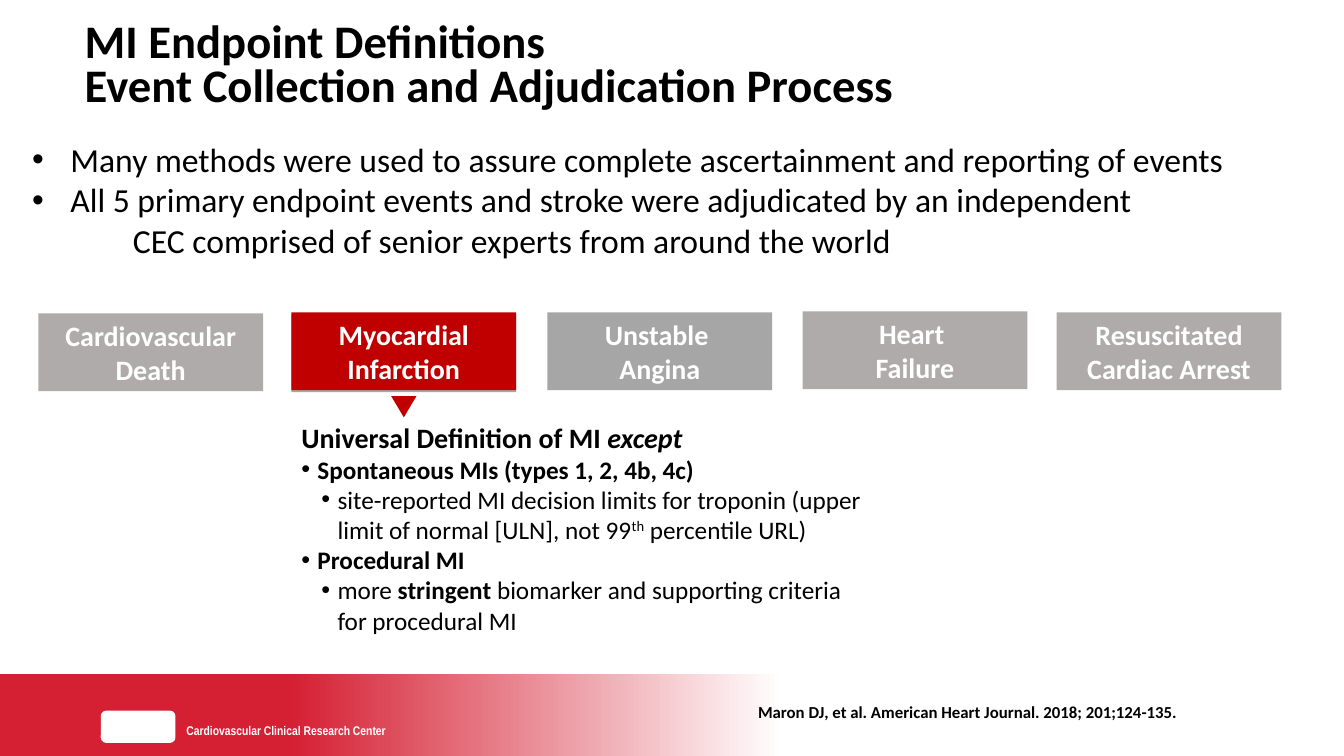
from dataclasses import dataclass

from lxml.etree import SubElement
from pptx import Presentation
from pptx.dml.color import RGBColor
from pptx.enum.shapes import MSO_SHAPE
from pptx.enum.text import MSO_ANCHOR, MSO_AUTO_SIZE, PP_ALIGN
from pptx.oxml.ns import qn
from pptx.util import Inches, Pt

COLORS = {
    "black": "000000",
    "white": "FFFFFF",
    "crimson": "D51F32",
    "red": "C00000",
    "gray": "A6A6A6",
    "warm_gray": "AFABAB",
}
BOX_WIDTH, BOX_HEIGHT = 2.23, 0.77


@dataclass
class Run:
    text: str
    size: float = 18
    bold: bool = False
    italic: bool = False
    superscript: bool = False
    color: str = "black"
    font: str = "Calibri"


@dataclass
class Para:
    runs: list[Run]
    margin: float = 0
    hanging: float = 0
    align: PP_ALIGN = PP_ALIGN.LEFT
    spacing: float = 1.0


@dataclass
class Endpoint:
    left: float
    top: float
    lines: list[str]
    fill: str


ENDPOINTS = [
    Endpoint(5.43, 3.1, ["Unstable ", "Angina"], "gray"),
    Endpoint(2.89, 3.1, ["Myocardial Infarction"], "red"),
    Endpoint(10.48, 3.1, ["Resuscitated Cardiac Arrest"], "warm_gray"),
    Endpoint(0.38, 3.11, ["Cardiovascular", "Death"], "warm_gray"),
    Endpoint(7.96, 3.09, ["Heart ", "Failure"], "warm_gray"),
]


def rgb(name: str) -> RGBColor:
    return RGBColor.from_string(COLORS[name])


def write_paras(tf, paras: list[Para]) -> None:
    """Fill a text frame; a paragraph with a hanging indent gets a bullet."""
    tf.word_wrap = True
    for i, para in enumerate(paras):
        p = tf.paragraphs[0] if i == 0 else tf.add_paragraph()
        p.alignment = para.align
        p.line_spacing = para.spacing
        p.space_before = p.space_after = Pt(0)
        pPr = p._p.get_or_add_pPr()
        pPr.set("marL", str(Inches(para.margin)))
        pPr.set("indent", str(-Inches(para.hanging)))
        if para.hanging:
            SubElement(pPr, qn("a:buFont"), typeface="Arial")
            SubElement(pPr, qn("a:buChar"), char="•")
        for run in para.runs:
            r = p.add_run()
            r.text = run.text
            r.font.name = run.font
            r.font.size = Pt(run.size)
            r.font.bold = run.bold
            r.font.italic = run.italic
            r.font.color.rgb = rgb(run.color)
            if run.superscript:
                r._r.get_or_add_rPr().set("baseline", "30000")


def add_text(slide, left: float, top: float, width: float, height: float,
             paras: list[Para]) -> None:
    sp = slide.shapes.add_textbox(*map(Inches, (left, top, width, height)))
    write_paras(sp.text_frame, paras)


def add_block(slide, left: float, top: float, width: float, height: float,
              fill: str, preset: MSO_SHAPE = MSO_SHAPE.RECTANGLE):
    sp = slide.shapes.add_shape(preset, *map(Inches, (left, top, width, height)))
    sp.shadow.inherit = False
    sp.fill.solid()
    sp.fill.fore_color.rgb = rgb(fill)
    sp.line.fill.background()
    return sp


def add_title(slide) -> None:
    sp = slide.shapes.title
    sp.left, sp.top, sp.width, sp.height = map(Inches, (0.74, 0.14, 12.41, 1.05))
    tf = sp.text_frame
    tf.auto_size = MSO_AUTO_SIZE.NONE
    tf.vertical_anchor = MSO_ANCHOR.MIDDLE
    lines = ["MI Endpoint Definitions", "Event Collection and Adjudication Process"]
    write_paras(tf, [Para([Run(line, 33.3, bold=True)], spacing=0.8) for line in lines])


def add_footer(slide) -> None:
    band = add_block(slide, -0.01, 6.69, 7.78, 0.81, "crimson")
    band.fill.gradient()
    band.fill.gradient_angle = 180
    for stop, position, color in zip(band.fill.gradient_stops, (0, 0.63), ("white", "crimson")):
        stop.position = position
        stop.color.rgb = rgb(color)
    add_block(slide, 1, 7.05, 0.74, 0.32, "white", MSO_SHAPE.ROUNDED_RECTANGLE)
    add_text(slide, 1.75, 7.12, 2.39, 0.15, [Para([Run(
        "Cardiovascular Clinical Research Center", 9, bold=True,
        color="white", font="Arial Narrow")])])
    add_text(slide, 7.42, 6.91, 4.57, 0.3, [Para([Run(
        "Maron DJ, et al. American Heart Journal. 2018; 201;124-135.", 12, bold=True)])])


def add_endpoints(slide) -> None:
    add_block(slide, 2.89, 3.12, BOX_WIDTH, BOX_HEIGHT, "gray")
    for box in ENDPOINTS:
        sp = add_block(slide, box.left, box.top, BOX_WIDTH, BOX_HEIGHT, box.fill)
        write_paras(sp.text_frame, [
            Para([Run(line, 20, bold=True, color="white")], align=PP_ALIGN.CENTER)
            for line in box.lines])
    pointer = add_block(slide, 3.88, 3.93, 0.25, 0.21, "red", MSO_SHAPE.ISOSCELES_TRIANGLE)
    pointer.rotation = 180


def add_methods(slide) -> None:
    bullets = [
        "Many methods were used to assure complete ascertainment and reporting of events",
        "All 5 primary endpoint events and stroke were adjudicated by an independent",
    ]
    paras = [Para([Run(text, 24)], 0.38, 0.38) for text in bullets]
    paras.append(Para([Run("CEC comprised of senior experts from around the world", 24)], 1))
    add_text(slide, 0.22, 1.33, 12.12, 1.31, paras)


def add_definition(slide) -> None:
    add_text(slide, 2.89, 4.12, 5.78, 2.26, [
        Para([Run("Universal Definition of MI ", 20, bold=True),
              Run("except", 20, bold=True, italic=True)]),
        Para([Run("Spontaneous MIs (types 1, 2, 4b, 4c)", bold=True)], 0.16, 0.16),
        Para([Run("site-reported MI decision limits for troponin "
                  "(upper limit of normal [ULN], not 99"),
              Run("th", superscript=True),
              Run(" percentile URL)")], 0.36, 0.16),
        Para([Run("Procedural MI", bold=True)], 0.16, 0.16),
        Para([Run("more "), Run("stringent", bold=True),
              Run(" biomarker and supporting criteria for procedural MI")], 0.36, 0.16),
    ])


def main() -> None:
    prs = Presentation()
    prs.slide_width, prs.slide_height = Inches(13.33), Inches(7.5)
    slide = prs.slides.add_slide(prs.slide_layouts[5])
    add_title(slide)
    add_footer(slide)
    add_endpoints(slide)
    add_methods(slide)
    add_definition(slide)
    prs.save("out.pptx")


if __name__ == "__main__":
    main()
